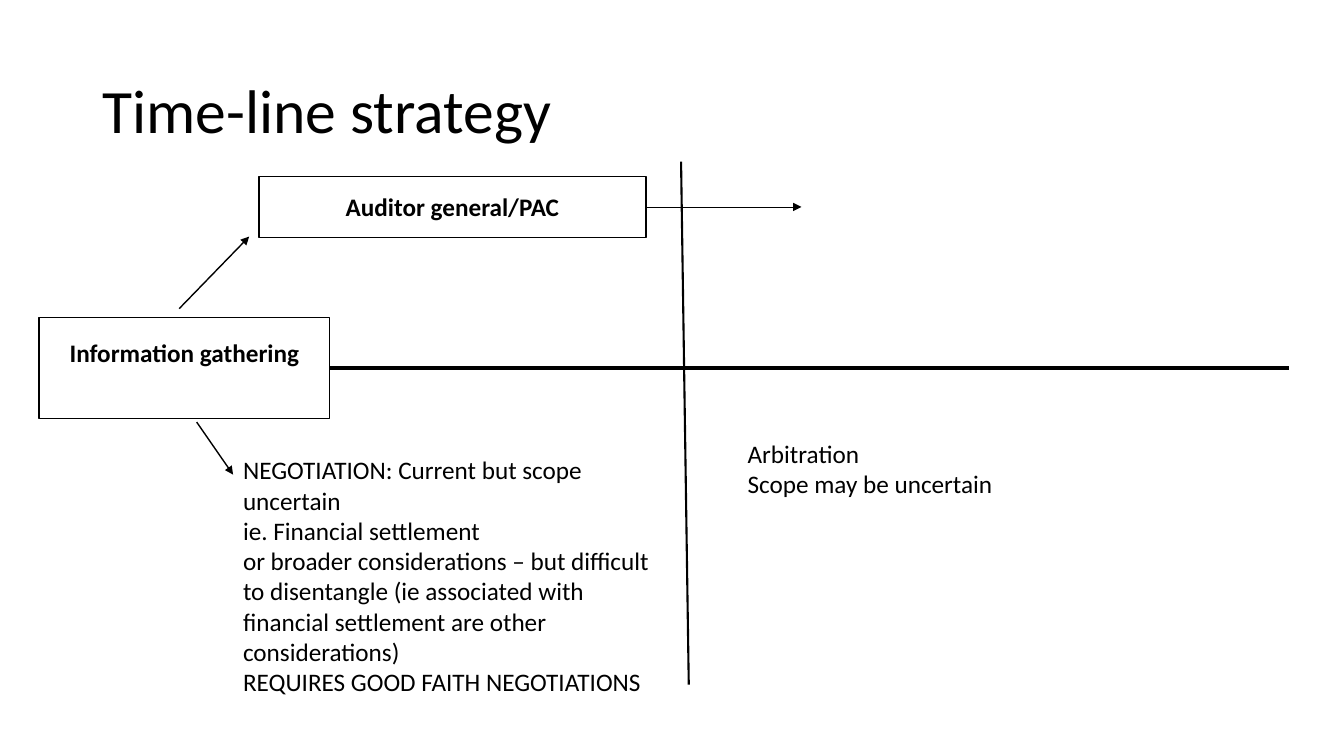
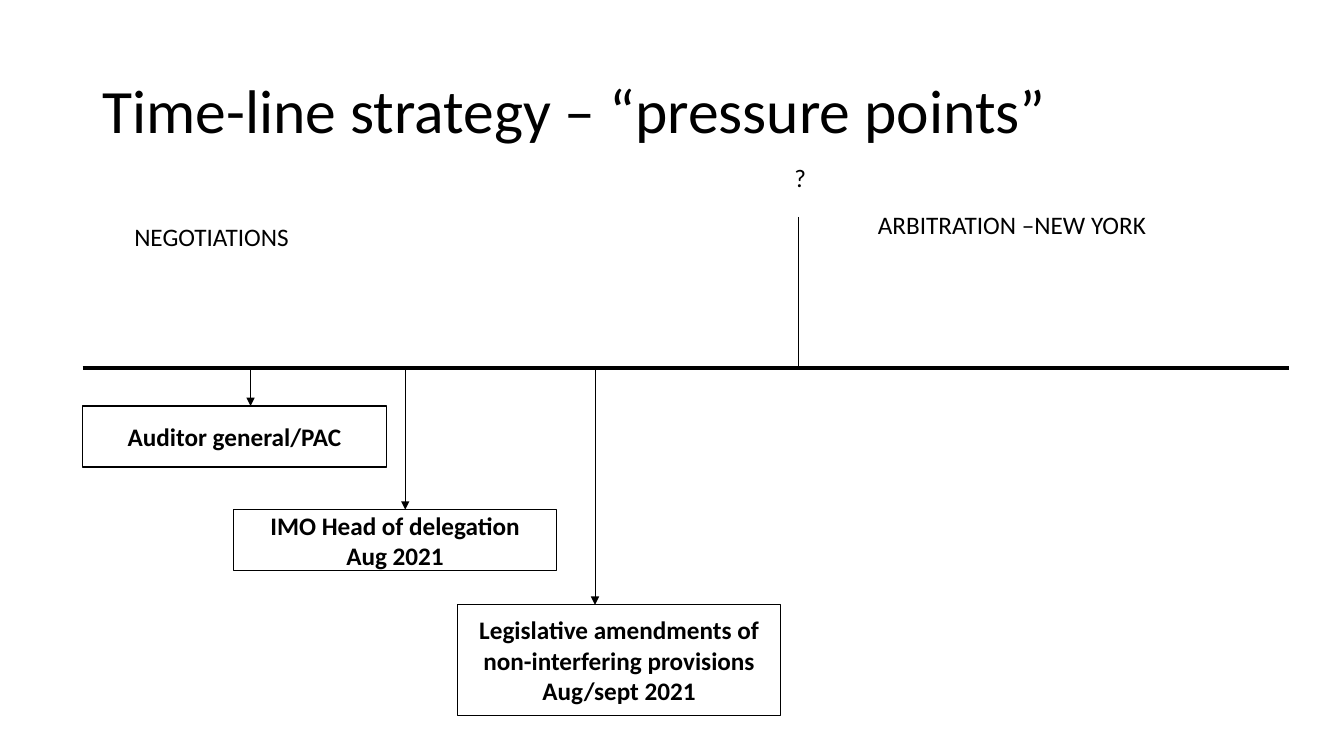
from dataclasses import dataclass

from lxml import etree
from pptx import Presentation
from pptx.dml.color import RGBColor
from pptx.enum import shapes, text
from pptx.oxml.ns import qn
from pptx.util import Pt

COLORS = {"ink": "000000", "paper": "FFFFFF"}
FONT = "Calibri"
TITLE_ONLY = 5
AXIS_Y, AXIS_LEFT, AXIS_RIGHT = 263, 59, 921


@dataclass(frozen=True)
class Area:
    left: float
    top: float
    width: float
    height: float

    def lengths(self) -> list:
        return [Pt(n) for n in (self.left, self.top, self.width, self.height)]


@dataclass(frozen=True)
class Step:
    words: str
    area: Area
    space_below: float = 3.6


@dataclass(frozen=True)
class Label:
    words: str
    area: Area
    align: text.PP_ALIGN = text.PP_ALIGN.LEFT


@dataclass(frozen=True)
class Line:
    start: tuple[float, float]
    end: tuple[float, float]
    weight: float = 1
    arrow: bool = False


@dataclass(frozen=True)
class PressurePoint:
    step: Step
    arrow_x: float


TITLE_AREA = Area(66, 28.8, 828, 104.4)
AXIS = Line((AXIS_LEFT, AXIS_Y), (AXIS_RIGHT, AXIS_Y), 3)

GATHERING_LINES = [
    Line((486.5, 115.5), (492, 489), 1.5),
    Line((140.5, 301.5), (166.5, 339), arrow=True),
    Line((128, 220.5), (178, 169), arrow=True),
    Line((461.5, 147.8), (572.5, 147.8), 0.5, True),
]
GATHERING_STEPS = [
    Step("Information gathering", Area(28, 227, 207.5, 72), space_below=25.6),
    Step("Auditor general/PAC", Area(185, 126, 276.5, 43.5)),
]
GATHERING_LABELS = [
    Label("NEGOTIATION: Current but scope uncertain\n"
          "ie. Financial settlement\n"
          "or broader considerations – but difficult to disentangle "
          "(ie associated with financial settlement are other considerations)\n"
          "REQUIRES GOOD FAITH NEGOTIATIONS", Area(166.5, 321.2, 309, 203.5)),
    Label("Arbitration\nScope may be uncertain", Area(527, 309.6, 337.5, 51)),
]

PRESSURE_POINTS = [
    PressurePoint(Step("Auditor general/PAC", Area(AXIS_LEFT, 290, 217, 43.5)), 179),
    PressurePoint(Step("IMO Head of delegation\nAug 2021",
                       Area(167, 364, 230.5, 43.5)), 289.5),
    PressurePoint(Step("Legislative amendments of non-interfering provisions\n"
                       "Aug/sept 2021", Area(327, 432, 230.5, 79)), 425),
]
ARBITRATION_START = Line((570.2, 155), (570.2, AXIS_Y), 0.5)
PRESSURE_LABELS = [
    Label("NEGOTIATIONS", Area(88.8, 154.8, 309, 51)),
    Label("ARBITRATION –NEW YORK", Area(620, 146.2, 263, 29)),
    Label("?", Area(550, 112.3, 43.2, 29), text.PP_ALIGN.CENTER),
]


def rgb(name: str) -> RGBColor:
    return RGBColor.from_string(COLORS[name])


def write(frame, words: str, *, size: float = 18, bold: bool = False,
          align=text.PP_ALIGN.LEFT, anchor=text.MSO_ANCHOR.TOP,
          spacing: float = 1.0) -> None:
    frame.text = words
    frame.word_wrap = True
    frame.vertical_anchor = anchor
    for paragraph in frame.paragraphs:
        paragraph.alignment = align
        paragraph.line_spacing = spacing
        for run in paragraph.runs:
            run.font.name = FONT
            run.font.size = Pt(size)
            run.font.bold = bold
            run.font.color.rgb = rgb("ink")


def add_line(slide, line: Line) -> None:
    connector = slide.shapes.add_connector(
        shapes.MSO_CONNECTOR.STRAIGHT, *[Pt(n) for n in line.start + line.end])
    connector.line.color.rgb = rgb("ink")
    connector.line.width = Pt(line.weight)
    properties = connector._element.spPr
    if line.arrow:
        etree.SubElement(properties.find(qn("a:ln")), qn("a:tailEnd"), type="triangle")
    etree.SubElement(properties, qn("a:effectLst"))


def add_step(slide, step: Step) -> None:
    box = slide.shapes.add_shape(shapes.MSO_SHAPE.RECTANGLE, *step.area.lengths())
    box.shadow.inherit = False
    box.fill.solid()
    box.fill.fore_color.rgb = rgb("paper")
    box.line.color.rgb = rgb("ink")
    box.line.width = Pt(1)
    box.text_frame.margin_bottom = Pt(step.space_below)
    write(box.text_frame, step.words, bold=True, align=text.PP_ALIGN.CENTER,
          anchor=text.MSO_ANCHOR.MIDDLE)


def add_label(slide, label: Label) -> None:
    frame = slide.shapes.add_textbox(*label.area.lengths()).text_frame
    write(frame, label.words, align=label.align)
    frame.auto_size = text.MSO_AUTO_SIZE.SHAPE_TO_FIT_TEXT


def add_timeline(deck, heading: str, lines: list[Line], steps: list[Step],
                 labels: list[Label]) -> None:
    slide = deck.slides.add_slide(deck.slide_layouts[TITLE_ONLY])
    title = slide.shapes.title
    title.left, title.top, title.width, title.height = TITLE_AREA.lengths()
    write(title.text_frame, heading, size=44, anchor=text.MSO_ANCHOR.MIDDLE,
          spacing=0.9)
    for line in [AXIS, *lines]:
        add_line(slide, line)
    for step in steps:
        add_step(slide, step)
    for label in labels:
        add_label(slide, label)


def main() -> None:
    deck = Presentation()
    deck.slide_width, deck.slide_height = Pt(960), Pt(540)
    add_timeline(deck, "Time-line strategy", GATHERING_LINES, GATHERING_STEPS,
                 GATHERING_LABELS)
    drops = [Line((point.arrow_x, AXIS_Y), (point.arrow_x, point.step.area.top), 0.5, True)
             for point in PRESSURE_POINTS]
    add_timeline(deck, "Time-line strategy – “pressure points”",
                 [ARBITRATION_START, *drops],
                 [point.step for point in PRESSURE_POINTS], PRESSURE_LABELS)
    deck.save("out.pptx")


if __name__ == "__main__":
    main()
